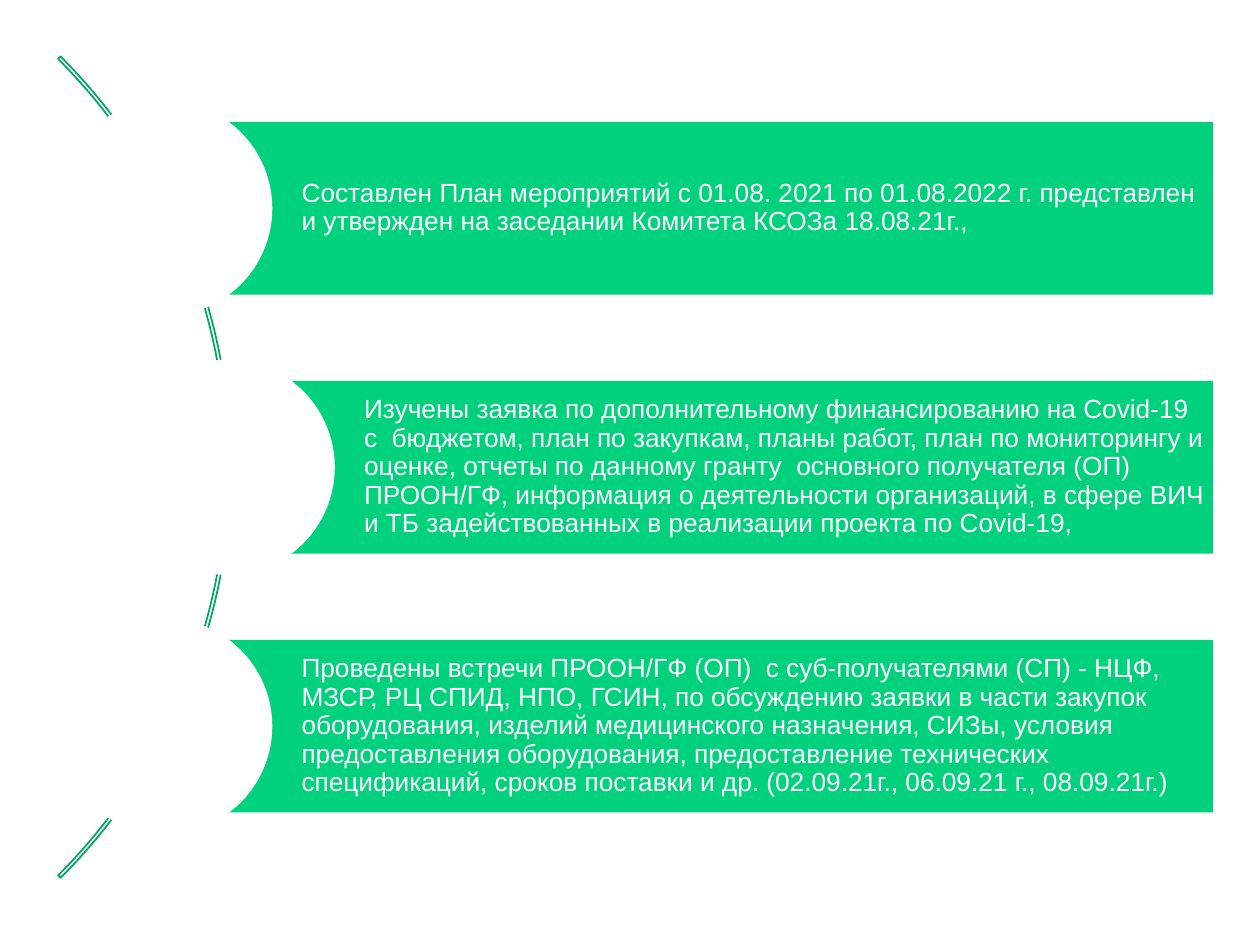
import pptx
import pptx.dml.color
import pptx.enum.shapes
import pptx.enum.text
import pptx.util

Cm = pptx.util.Cm
Shape = pptx.enum.shapes.MSO_SHAPE

WHITE = pptx.dml.color.RGBColor(0xFF, 0xFF, 0xFF)
GREEN = pptx.dml.color.RGBColor(0x01, 0xD1, 0x7D)
DARK_GREEN = pptx.dml.color.RGBColor(0x01, 0xA7, 0x64)

# Layout in centimetres
BAR_RIGHT = 24.45
BAR_HEIGHT = 3.48
FIRST_MIDDLE = 4.2
STEP_PITCH = 5.22
CIRCLE_SIZE = 4.34
ARC_LEFT, ARC_SIZE = -18.77, 23.42

# Left edge of the bar and its wording
STEPS = [
    (3.32, "Составлен План мероприятий с 01.08. 2021 по 01.08.2022 г. представлен "
           "и утвержден на заседании Комитета КСОЗа 18.08.21г.,"),
    (4.58, "Изучены заявка по дополнительному финансированию на Сovid-19 "
           "с  бюджетом, план по закупкам, планы работ, план по мониторингу и "
           "оценке, отчеты по данному гранту  основного получателя (ОП) "
           "ПРООН/ГФ, информация о деятельности организаций, в сфере ВИЧ "
           "и ТБ задействованных в реализации проекта по Сovid-19,"),
    (3.32, "Проведены встречи ПРООН/ГФ (ОП)  с суб-получателями (СП) - НЦФ, "
           "МЗСР, РЦ СПИД, НПО, ГСИН, по обсуждению заявки в части закупок "
           "оборудования, изделий медицинского назначения, СИЗы, условия "
           "предоставления оборудования, предоставление технических "
           "спецификаций, сроков поставки и др. (02.09.21г., 06.09.21 г., 08.09.21г.)"),
]


class StepSlide:
    font_name = "Arial"
    font_size = pptx.util.Pt(15)

    def __init__(self, slide):
        self.slide = slide

    def outline(self, kind, left, middle, width, height):
        """Add a bare shape centred vertically on middle."""
        shape = self.slide.shapes.add_shape(
            kind, Cm(left), Cm(middle - height / 2), Cm(width), Cm(height))
        shape.shadow.inherit = False
        shape.fill.background()
        shape.line.fill.background()
        return shape

    def arc(self, left, middle, size):
        arc = self.outline(Shape.BLOCK_ARC, left, middle, size, size)
        # Start angle, end angle, relative thickness
        for index, value in enumerate((189, 27, 0.003)):
            arc.adjustments[index] = value
        arc.line.color.rgb = DARK_GREEN
        arc.line.width = pptx.util.Pt(1)

    def bar(self, left, middle, wording):
        bar = self.outline(Shape.RECTANGLE, left, middle, BAR_RIGHT - left, BAR_HEIGHT)
        bar.fill.solid()
        bar.fill.fore_color.rgb = GREEN
        frame = bar.text_frame
        frame.text = wording
        frame.word_wrap = True
        frame.vertical_anchor = pptx.enum.text.MSO_ANCHOR.MIDDLE
        frame.margin_left = Cm(2.76)
        frame.margin_right = frame.margin_top = frame.margin_bottom = Cm(0.1)
        paragraph = frame.paragraphs[0]
        paragraph.alignment = pptx.enum.text.PP_ALIGN.LEFT
        paragraph.line_spacing = 0.9
        for run in paragraph.runs:
            run.font.name = self.font_name
            run.font.size = self.font_size
            run.font.color.rgb = WHITE

    def circle(self, center, middle):
        circle = self.outline(Shape.OVAL, center - CIRCLE_SIZE / 2, middle,
                              CIRCLE_SIZE, CIRCLE_SIZE)
        circle.fill.solid()
        circle.fill.fore_color.rgb = WHITE


def main():
    deck = pptx.Presentation()
    deck.slide_width, deck.slide_height = Cm(25.4), Cm(19.05)
    page = StepSlide(deck.slides.add_slide(deck.slide_layouts[6]))

    # Arc that links the steps, centred on the second one
    page.arc(ARC_LEFT, FIRST_MIDDLE + STEP_PITCH, ARC_SIZE)

    # Each bar has a circle centred on its left edge
    for row, (left, wording) in enumerate(STEPS):
        middle = FIRST_MIDDLE + row * STEP_PITCH
        page.bar(left, middle, wording)
        page.circle(left, middle)

    deck.save("out.pptx")


if __name__ == "__main__":
    main()
